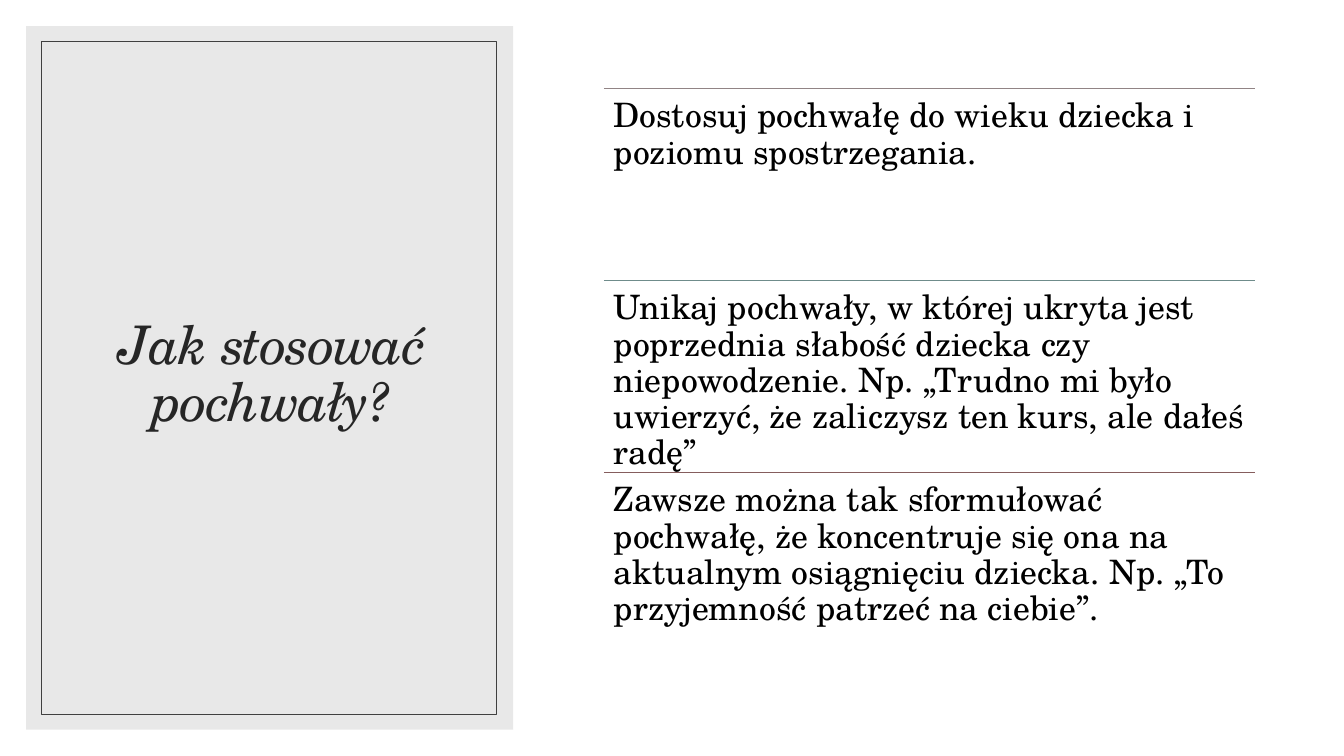
from lxml.etree import SubElement
from pptx import Presentation
from pptx.dml.color import RGBColor
from pptx.enum.shapes import MSO_CONNECTOR as Connector, MSO_SHAPE as Shape
from pptx.enum.text import MSO_ANCHOR as Anchor, PP_ALIGN as Align
from pptx.oxml.ns import qn
from pptx.util import Inches, Pt

FONT = "TeX Gyre Schola"
ADVICE = [
    ("918485", "Dostosuj pochwałę do wieku dziecka i poziomu spostrzegania."),
    ("6F8C8B", "Unikaj pochwały, w której ukryta jest poprzednia słabość dziecka czy "
               "niepowodzenie. Np. „Trudno mi było uwierzyć, że zaliczysz ten kurs, "
               "ale dałeś radę”"),
    ("855D5D", "Zawsze można tak sformułować pochwałę, że koncentruje się ona na "
               "aktualnym osiągnięciu dziecka. Np. „To przyjemność patrzeć na ciebie”."),
]
LEFT, TOP, WIDTH, ROW = 5.99, 0.88, 6.46, 1.905


def color(value):
    return RGBColor.from_string(value)


def add_text(page, place, text, font, para_format, frame_format):
    """Add a wrapped one-paragraph text box and return its text run."""
    frame = page.shapes.add_textbox(*map(Inches, place)).text_frame
    para = frame.paragraphs[0]
    span = para.add_run()
    span.text = text
    span.font.color.rgb = color(font.pop("color"))
    for target, values in (
        (frame, {"word_wrap": True, **frame_format}),
        (para, {"line_spacing": 0.9, **para_format}),
        (span.font, {"name": FONT, **font}),
    ):
        for name, value in values.items():
            setattr(target, name, value)
    return span


deck = Presentation()
deck.slide_width, deck.slide_height = Inches(13.33), Inches(7.5)
page = deck.slides.add_slide(deck.slide_layouts[6])
page.background.fill.solid()
page.background.fill.fore_color.rgb = color("FFFFFF")

# Title panel with its thin inner frame
panel = page.shapes.add_shape(Shape.RECTANGLE, *map(Inches, (0.26, 0.26, 4.83, 6.98)))
panel.shadow.inherit = False
panel.fill.solid()
panel.fill.fore_color.rgb = color("D9D9D9")
panel.line.fill.background()
panel_color = panel.fill._xPr.find(qn("a:solidFill")).find(qn("a:srgbClr"))
SubElement(panel_color, qn("a:alpha"), val="60000")

title = add_text(
    page, (0.63, 0.61, 4.12, 6.24), "Jak stosować pochwały?",
    {"size": Pt(38), "italic": True, "color": "262626"},
    {"alignment": Align.CENTER}, {"vertical_anchor": Anchor.MIDDLE},
)
title.font._element.set("spc", "-70")

border = page.shapes.add_shape(Shape.RECTANGLE, *map(Inches, (0.41, 0.41, 4.51, 6.68)))
border.shadow.inherit = False
border.fill.background()
border.line.color.rgb = color("404040")
border.line.width = Pt(0.5)

# Advice rows, each under a coloured rule
margins = {f"margin_{side}": Inches(0.1) for side in ("left", "top", "right", "bottom")}
for index, (rule_color, text) in enumerate(ADVICE):
    top = TOP + index * ROW
    rule = page.shapes.add_connector(
        Connector.STRAIGHT, *map(Inches, (LEFT, top, LEFT + WIDTH, top)))
    rule.line.color.rgb = color(rule_color)
    rule.line.width = Pt(1)
    SubElement(rule._element.spPr, qn("a:effectLst"))
    add_text(
        page, (LEFT, top, WIDTH, ROW), text,
        {"size": Pt(24), "color": "000000"},
        {"alignment": Align.LEFT}, {"vertical_anchor": Anchor.TOP, **margins},
    )

deck.save("out.pptx")
